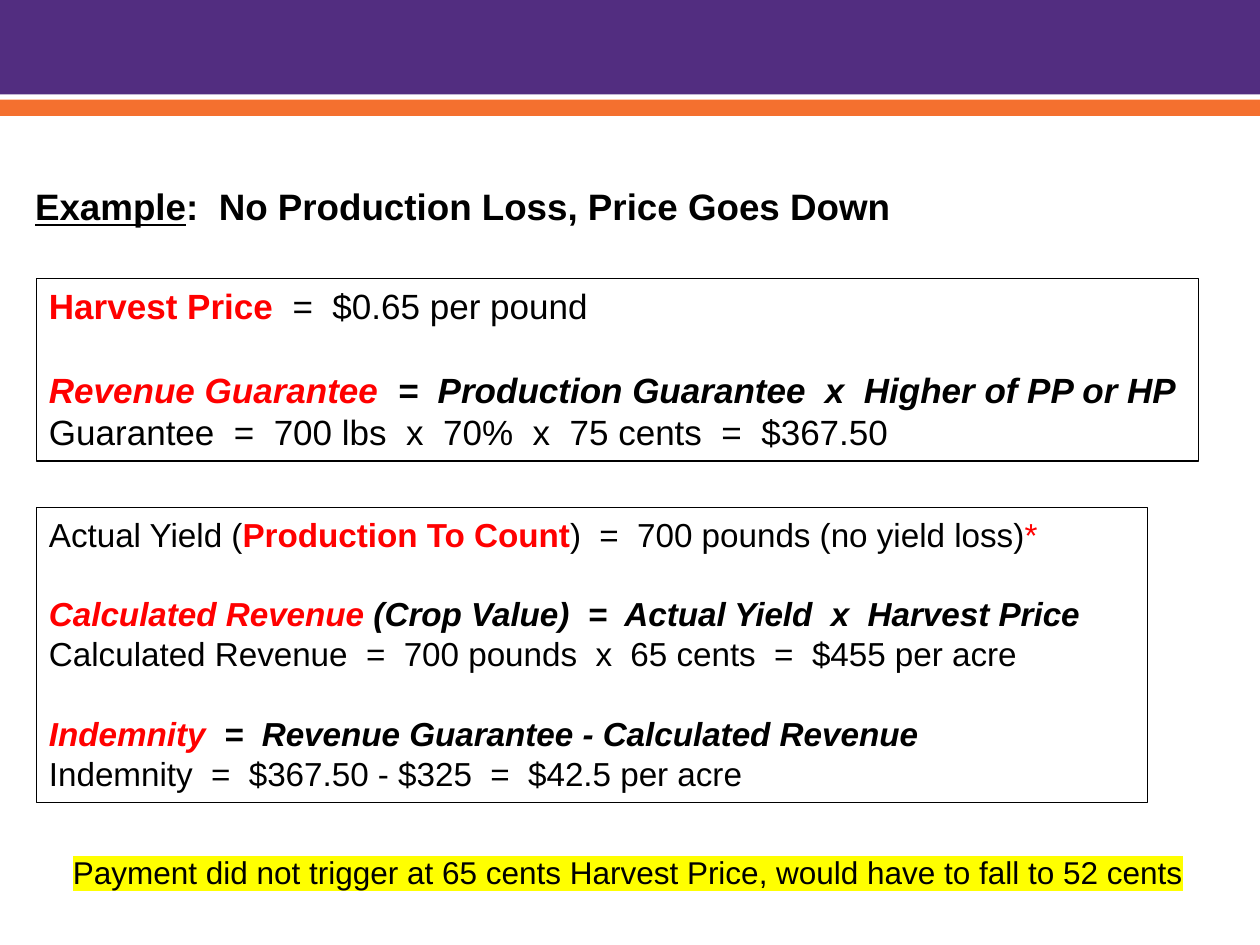
from dataclasses import dataclass

from lxml import etree
from pptx import Presentation, util as u
from pptx.dml.color import RGBColor
from pptx.enum import shapes, text
from pptx.oxml.ns import qn


@dataclass(frozen=True)
class Theme:
    font: str = "Arial"
    purple: str = "522D80"
    orange: str = "F4702F"
    ink: str = "000000"
    red: str = "FF0000"
    marker: str = "FFFF00"
    title: int = 21
    guarantee: int = 20
    revenue: int = 19
    note: int = 18
    leading: float = 1.2


@dataclass(frozen=True)
class Run:
    words: str
    red: bool = False
    bold: bool = False
    italic: bool = False
    underline: bool = False
    marked: bool = False


@dataclass(frozen=True)
class Line:
    runs: tuple
    gap: bool = False


def formula(term, rest):
    """A bold italic definition, set one line below the text above it."""
    return Line((Run(term, red=True, bold=True, italic=True),
                 Run(rest, bold=True, italic=True)), gap=True)


def plain(words):
    return Line((Run(words),))


class Deck:
    COLS, ROWS = 100, 75

    def __init__(self, theme):
        self.theme = theme
        self.prs = Presentation()
        self.prs.slide_width, self.prs.slide_height = u.Inches(10), u.Inches(7.5)
        self.s = self.prs.slides.add_slide(self.prs.slide_layouts[6])

    def place(self, col, row, cols, rows):
        """Turn grid columns and rows into slide lengths."""
        dx = self.prs.slide_width / self.COLS
        dy = self.prs.slide_height / self.ROWS
        return [u.Emu(round(n)) for n in (col * dx, row * dy, cols * dx, rows * dy)]

    def rect(self, *cell):
        sp = self.s.shapes.add_shape(shapes.MSO_SHAPE.RECTANGLE, *self.place(*cell))
        sp.shadow.inherit = False
        return sp

    def band(self, row, rows, color):
        """A stripe that bleeds off both sides."""
        sp = self.rect(-2.5, row, 106.7, rows)
        sp.fill.solid()
        sp.fill.fore_color.rgb = RGBColor.from_string(color)
        sp.line.fill.background()

    def panel(self, cell, lines, size):
        sp = self.rect(*cell)
        sp.fill.background()
        sp.line.color.rgb = RGBColor.from_string(self.theme.ink)
        sp.line.width = u.Pt(0.75)
        self.add_lines(sp.text_frame, lines, size)

    def label(self, cell, lines, size):
        sp = self.s.shapes.add_textbox(*self.place(*cell))
        self.add_lines(sp.text_frame, lines, size)

    def add_lines(self, tf, lines, size):
        tf.word_wrap = True
        tf.vertical_anchor = text.MSO_ANCHOR.TOP
        pitch = u.Pt(size * self.theme.leading)
        for i, line in enumerate(lines):
            p = tf.add_paragraph() if i else tf.paragraphs[0]
            p.alignment = text.PP_ALIGN.LEFT
            p.line_spacing = pitch
            if line.gap:
                p.space_before = pitch
            for run in line.runs:
                self.add_run(p, run, size)

    def add_run(self, p, run, size):
        r = p.add_run()
        r.text = run.words
        f = r.font
        f.size, f.bold, f.italic, f.underline = u.Pt(size), run.bold, run.italic, run.underline
        f.color.rgb = RGBColor.from_string(self.theme.red if run.red else self.theme.ink)
        if run.marked:
            mark = etree.SubElement(r._r.get_or_add_rPr(), qn("a:highlight"))
            etree.SubElement(mark, qn("a:srgbClr"), val=self.theme.marker)
        f.name = self.theme.font


def main():
    t = Theme()
    d = Deck(t)
    d.band(-1.7, 9.2, t.purple)
    d.band(7.9, 1.3, t.orange)

    d.label((1.8, 14.1, 71.5, 4.5), [Line((
        Run("Example", bold=True, underline=True),
        Run(":  No Production Loss, Price Goes Down", bold=True)))], t.title)

    d.panel((2.9, 22.1, 92.2, 14.5), [
        Line((Run("Harvest Price", red=True, bold=True), Run("  =  $0.65 per pound"))),
        formula("Revenue Guarantee  ", "=  Production Guarantee  x  Higher of PP or HP"),
        plain("Guarantee  =  700 lbs  x  70%  x  75 cents  =  $367.50"),
    ], t.guarantee)

    d.panel((2.9, 40.3, 88.2, 23.4), [
        Line((Run("Actual Yield ("), Run("Production To Count", red=True, bold=True),
              Run(")  =  700 pounds (no yield loss)"), Run("*", red=True))),
        formula("Calculated Revenue", " (Crop Value)  =  Actual Yield  x  Harvest Price"),
        plain("Calculated Revenue  =  700 pounds  x  65 cents  =  $455 per acre"),
        formula("Indemnity", "  =  Revenue Guarantee - Calculated Revenue"),
        plain("Indemnity  =  $367.50 - $325  =  $42.5 per acre"),
    ], t.revenue)

    d.label((4.8, 67.2, 90.9, 4), [Line((Run(
        "Payment did not trigger at 65 cents Harvest Price, would have to fall to 52 cents",
        marked=True),))], t.note)

    d.prs.save("out.pptx")


if __name__ == "__main__":
    main()
